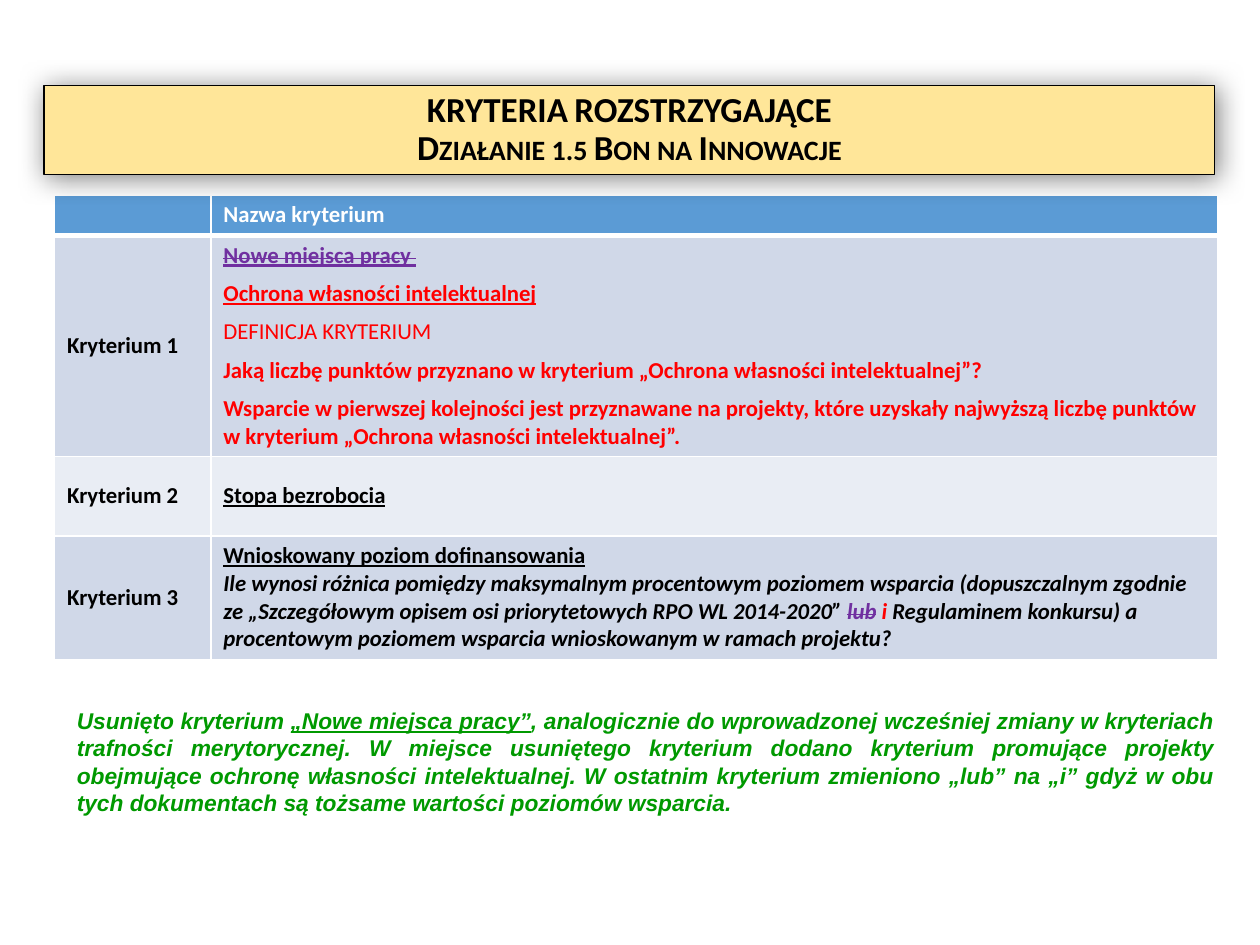
from lxml import etree
from pptx import Presentation
from pptx.dml.color import RGBColor
from pptx.enum.shapes import MSO_SHAPE as Shape
from pptx.enum.text import MSO_ANCHOR as Anchor, MSO_AUTO_SIZE as AutoSize, PP_ALIGN as Align
from pptx.oxml.ns import qn
from pptx.util import Cm, Pt

COLOURS = {
    "black": "000000", "white": "FFFFFF", "red": "FF0000", "purple": "7030A0",
    "green": "009900", "sand": "FFE699", "header": "5B9BD5",
    "band_dark": "D0D8E8", "band_light": "E9EDF4",
}
BLACK = {"color": "black"}
RED = {"color": "red"}
REMOVED = {"color": "purple", "strike": "sngStrike"}
UNDERLINED = {"underline": True}


def colour(name):
    return RGBColor.from_string(COLOURS[name])


class CriteriaSlide:
    """Holds the text style and the slide being built."""

    base = {"name": "Calibri", "size": Pt(13), "bold": True, "color": "black"}

    def __init__(self, deck):
        self.slide = deck.slides.add_slide(deck.slide_layouts[6])

    def add_text(self, frame, paragraphs, style=None, **layout):
        """Each paragraph is a list of (text, format) runs."""
        for index, runs in enumerate(paragraphs):
            paragraph = frame.paragraphs[0] if index == 0 else frame.add_paragraph()
            for name, value in layout.items():
                if name != "space_before" or index > 0:
                    setattr(paragraph, name, value)
            for text, extra in runs:
                run = paragraph.add_run()
                run.text = text
                for name, value in {**self.base, **(style or {}), **extra}.items():
                    if name == "color":
                        run.font.color.rgb = colour(value)
                    elif name in ("cap", "strike"):
                        run._r.get_or_add_rPr().set(name, value)
                    else:
                        setattr(run.font, name, value)

    def banner(self, box, paragraphs):
        banner = self.slide.shapes.add_shape(Shape.RECTANGLE, *map(Cm, box))
        banner.fill.solid()
        banner.fill.fore_color.rgb = colour("sand")
        banner.line.color.rgb = colour("black")
        banner.line.width = Pt(0.75)
        # Soft dark halo around the banner
        banner.shadow.inherit = False
        effects = banner._element.spPr.find(qn("a:effectLst"))
        halo = etree.SubElement(effects, qn("a:outerShdw"), blurRad=str(Cm(0.55)),
                                dist=str(Cm(0.05)), dir="2700000", algn="ctr", rotWithShape="0")
        tint = etree.SubElement(halo, qn("a:srgbClr"), val=COLOURS["black"])
        etree.SubElement(tint, qn("a:alpha"), val="50000")
        banner.text_frame.word_wrap = True
        banner.text_frame.vertical_anchor = Anchor.MIDDLE
        self.add_text(banner.text_frame, paragraphs, {"size": Pt(20), "cap": "small"},
                      alignment=Align.CENTER, line_spacing=0.9)

    def note(self, box, paragraphs):
        frame = self.slide.shapes.add_textbox(*map(Cm, box)).text_frame
        frame.word_wrap = True
        frame.auto_size = AutoSize.SHAPE_TO_FIT_TEXT
        self.add_text(frame, paragraphs, {"name": "Arial", "color": "green", "italic": True},
                      alignment=Align.JUSTIFY)

    def borders(self, cell, widths):
        properties = cell._tc.get_or_add_tcPr()
        for index, (side, width) in enumerate(zip("LRTB", widths)):
            line = etree.Element(qn(f"a:ln{side}"), w=str(Pt(width)))
            fill = etree.SubElement(line, qn("a:solidFill"))
            etree.SubElement(fill, qn("a:srgbClr"), val=COLOURS["white"])
            properties.insert(index, line)

    def table(self, left, top, widths, heights, rows):
        table = self.slide.shapes.add_table(
            len(rows), len(widths), Cm(left), Cm(top), Cm(sum(widths)), Cm(sum(heights))).table
        for column, width in zip(table.columns, widths):
            column.width = Cm(width)
        for index, (label, content, gap) in enumerate(rows):
            table.rows[index].height = Cm(heights[index])
            header = index == 0
            band = "header" if header else "band_dark" if index % 2 else "band_light"
            for cell, paragraphs in zip(table.rows[index].cells, ([label], content)):
                cell.fill.solid()
                cell.fill.fore_color.rgb = colour(band)
                cell.vertical_anchor = Anchor.TOP if header else Anchor.MIDDLE
                self.borders(cell, (1, 1, 3 if index == 1 else 1, 3 if header else 1))
                self.add_text(cell.text_frame, paragraphs,
                              {"color": "white" if header else "black"}, space_before=Pt(gap))
                if not paragraphs[0]:
                    # Keep the empty header cell as low as its neighbour
                    etree.SubElement(cell.text_frame.paragraphs[0]._p,
                                     qn("a:endParaRPr"), sz="1300")


def main():
    deck = Presentation()
    deck.slide_width, deck.slide_height = Cm(25.4), Cm(19.05)
    page = CriteriaSlide(deck)

    # Criteria table: label, paragraphs, gap between paragraphs
    rows = [
        ([], [[("Nazwa kryterium", {})]], 0),
        ([("Kryterium 1", {})], [
            [("Nowe miejsca pracy ", {**REMOVED, **UNDERLINED})],
            [("Ochrona własności intelektualnej", {**RED, **UNDERLINED})],
            [("DEFINICJA KRYTERIUM", {**RED, "bold": False})],
            [("Jaką liczbę punktów przyznano w kryterium „Ochrona własności intelektualnej”?", RED)],
            [("Wsparcie w pierwszej kolejności jest przyznawane na projekty, które uzyskały "
              "najwyższą liczbę punktów w kryterium „Ochrona własności intelektualnej”.", RED)],
        ], 6),
        ([("Kryterium 2", {})], [[("Stopa bezrobocia", UNDERLINED)]], 0),
        ([("Kryterium 3", {})], [
            [("Wnioskowany poziom dofinansowania", UNDERLINED)],
            [(text, {**tone, "italic": True}) for text, tone in (
                ("Ile wynosi różnica pomiędzy maksymalnym procentowym poziomem wsparcia "
                 "(dopuszczalnym zgodnie ze „Szczegółowym opisem osi priorytetowych "
                 "RPO WL 2014-2020” ", BLACK),
                ("lub", REMOVED), (" ", BLACK), ("i", RED),
                (" Regulaminem konkursu) a procentowym poziomem wsparcia wnioskowanym "
                 "w ramach projektu?", BLACK))],
        ], 0),
    ]
    page.table(1.1, 3.93, (3.15, 20.29), (0.8, 4.45, 1.6, 2.46), rows)

    # Title banner
    page.banner((0.89, 1.72, 23.6, 1.8), [
        [("KRYTERIA ROZSTRZYGAJĄCE", {})],
        [("Działanie 1.5 Bon na Innowacje", {})],
    ])

    # Explanation of the changes
    page.note((1.3, 14.12, 23.4, 2.5), [[
        ("Usunięto kryterium ", {}),
        ("„Nowe miejsca pracy”", UNDERLINED),
        (", analogicznie do wprowadzonej wcześniej zmiany w kryteriach trafności "
         "merytorycznej. W miejsce usuniętego kryterium dodano kryterium promujące projekty "
         "obejmujące ochronę własności intelektualnej. W ostatnim kryterium zmieniono „lub” "
         "na „i” gdyż w obu tych dokumentach są tożsame wartości poziomów wsparcia.", {}),
    ]])

    deck.save("out.pptx")


if __name__ == "__main__":
    main()
